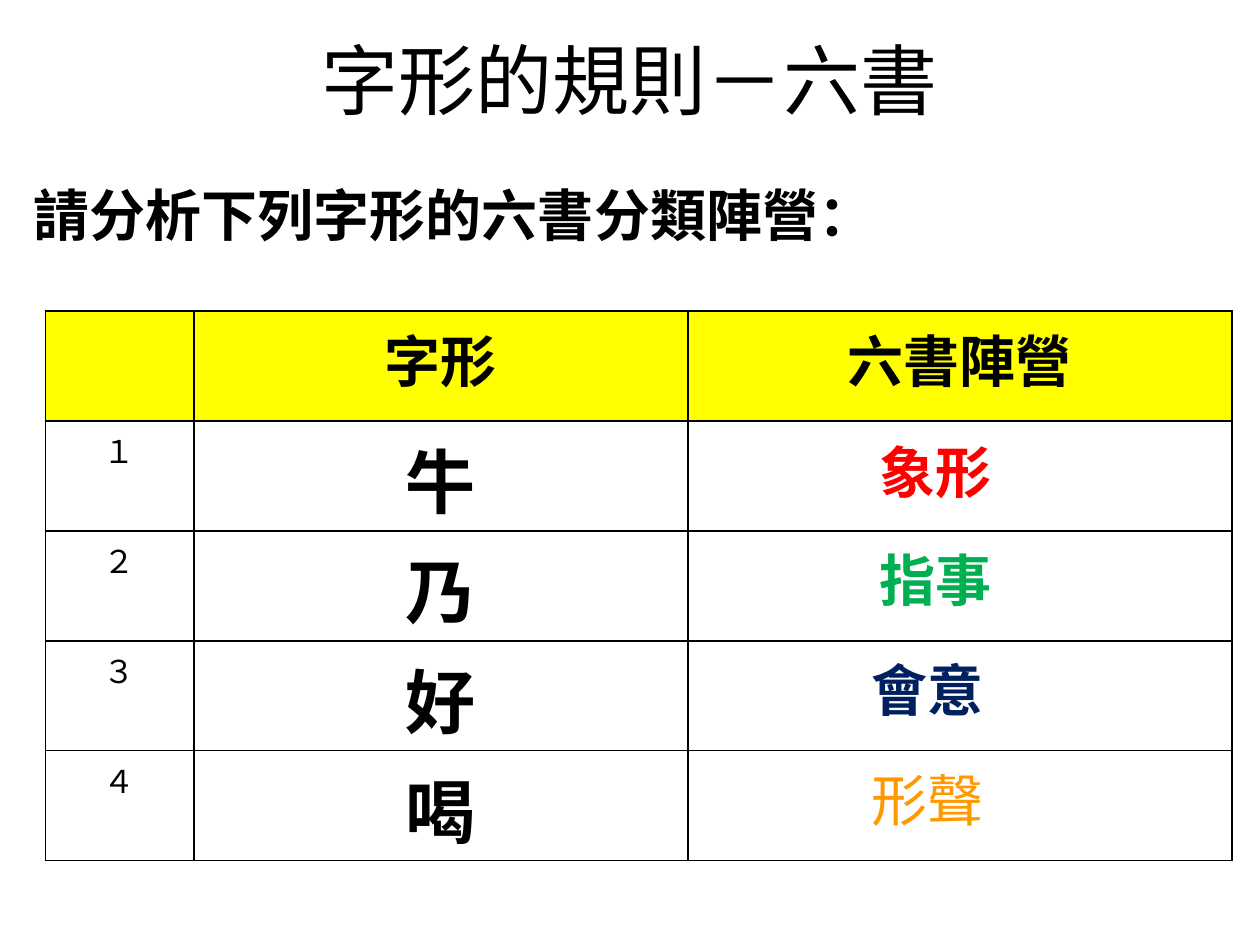
from lxml.etree import SubElement
from pptx import Presentation
from pptx.dml.color import RGBColor
from pptx.enum.text import MSO_ANCHOR, PP_ALIGN
from pptx.oxml.ns import qn
from pptx.util import Pt

BLACK = RGBColor(0, 0, 0)
YELLOW = RGBColor(0xFF, 0xFF, 0)
RED = RGBColor(0xFF, 0, 0)
GREEN = RGBColor(0, 0xB0, 0x50)
NAVY = RGBColor(0, 0x20, 0x60)
ORANGE = RGBColor(0xFF, 0x99, 0)


def style(para, text, size, bold=False, color=BLACK, name="Arial"):
    para.add_run().text = text
    font = para.font
    font.size = Pt(size)
    font.bold = bold
    font.color.rgb = color
    font.name = name


def add_box(left, top, width, height):
    box = slide.shapes.add_textbox(Pt(left), Pt(top), Pt(width), Pt(height))
    box.text_frame.word_wrap = True
    return box.text_frame


deck = Presentation()
deck.slide_width, deck.slide_height = Pt(720), Pt(540)
slide = deck.slides.add_slide(deck.slide_layouts[6])

title = add_box(36, 0, 648, 90)
title.vertical_anchor = MSO_ANCHOR.MIDDLE
style(title.paragraphs[0], "字形的規則－六書", 44, name="Calibri")
title.paragraphs[0].alignment = PP_ALIGN.CENTER

prompt = add_box(12.24, 99.36, 648, 48.96).paragraphs[0]
style(prompt, "請分析下列字形的六書分類陣營", 32, True, name="Calibri")
colon = prompt.add_run()
colon.text = "："
colon.font.name = "Noto Sans CJK TC"

rows = [
    ("", "字形", "六書陣營"),
    ("１", "牛", ""),
    ("２", "乃", ""),
    ("３", "好", ""),
    ("４", "喝", ""),
]
table = slide.shapes.add_table(5, 3, Pt(25.92), Pt(177.84), Pt(678.24), Pt(314)).table
for col, width in zip(table.columns, (84.96, 282.24, 311.04)):
    col.width = Pt(width)
for r, row in enumerate(rows):
    table.rows[r].height = Pt(62.8)
    for c, text in enumerate(row):
        cell = table.cell(r, c)
        if text:
            size = 32 if r == 0 else (18, 40)[c]
            style(cell.text_frame.paragraphs[0], text, size, size > 18)
            cell.text_frame.paragraphs[0].alignment = PP_ALIGN.CENTER
        props = cell._tc.get_or_add_tcPr()
        for side in ("a:lnL", "a:lnR", "a:lnT", "a:lnB"):
            line = SubElement(props, qn(side), w=str(Pt(1)))
            fill = SubElement(line, qn("a:solidFill"))
            SubElement(fill, qn("a:srgbClr"), val=str(BLACK))
        if r == 0:
            cell.fill.solid()
            cell.fill.fore_color.rgb = YELLOW
        else:
            cell.fill.background()

answers = [
    ("象形", 495.36, 246.24, 97.92, RED, True),
    ("指事", 495.36, 308.16, 85.68, GREEN, True),
    ("會意", 491.04, 370.8, 90, NAVY, True),
    ("形聲", 491.04, 434.16, 90, ORANGE, False),
]
for text, left, top, width, color, bold in answers:
    style(add_box(left, top, width, 46.08).paragraphs[0], text, 32, bold, color)

deck.save("out.pptx")
